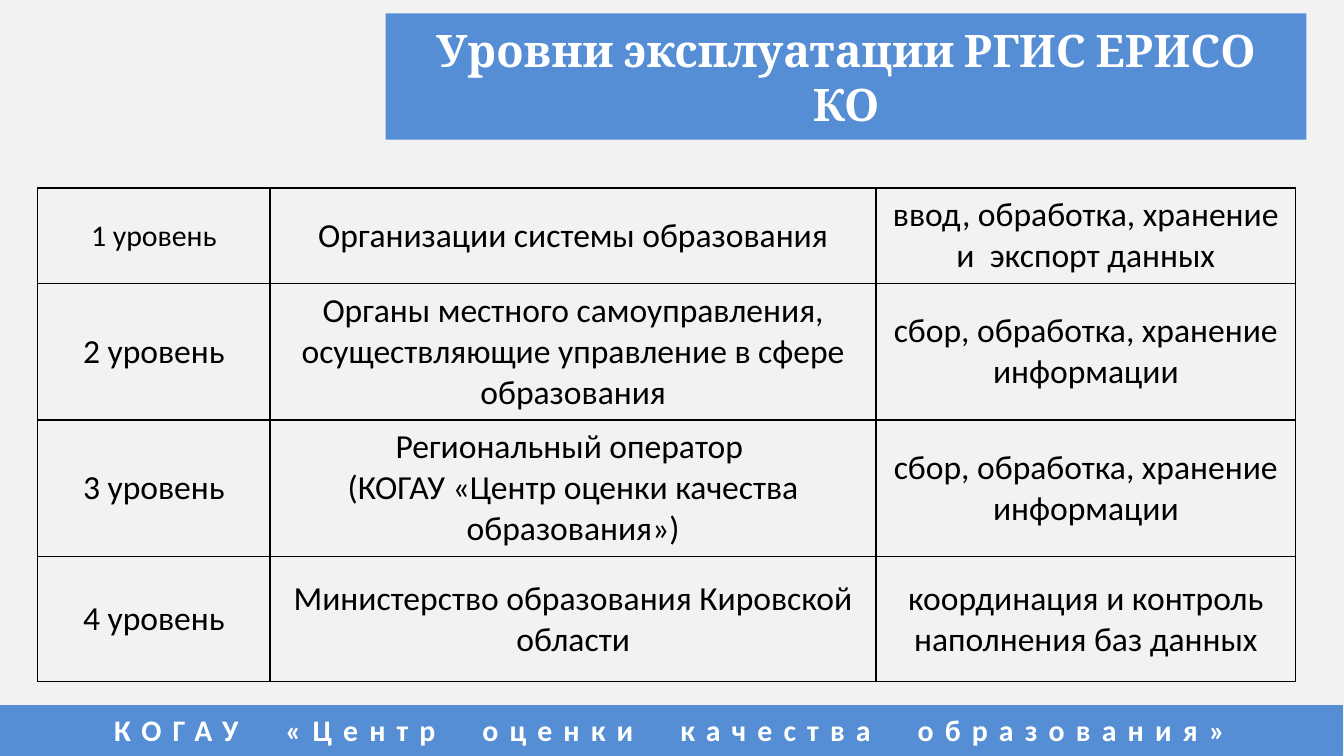
"""Build a slide with a table of the levels at which a regional system is run."""
from lxml.etree import SubElement
from pptx import Presentation
from pptx.dml.color import RGBColor as RGB
from pptx.enum.shapes import MSO_SHAPE as SHAPE
from pptx.enum.text import MSO_ANCHOR as ANCHOR, PP_ALIGN as ALIGN
from pptx.oxml.ns import qn
from pptx.util import Inches, Pt

HUES = {"back": "F2F2F2", "blue": "558ED5", "white": "FFFFFF", "black": "000000"}
TITLE = "Уровни эксплуатации РГИС ЕРИСО КО"
FOOTER = "КОГАУ  «Центр  оценки  качества  образования»"
COLS = (1.73, 4.51, 3.12)
TABLE = (0.28, 1.4, sum(COLS), 3.63)
LEVELS = [
    (0.61, "1 уровень", "Организации системы образования",
     "ввод, обработка, хранение и  экспорт данных"),
    (0.72, "2 уровень", "Органы местного самоуправления, осуществляющие управление в сфере образования",
     "сбор, обработка, хранение информации"),
    (0.93, "3 уровень", "Региональный оператор \n(КОГАУ «Центр оценки качества образования»)",
     "сбор, обработка, хранение информации"),
    (0.93, "4 уровень", "Министерство образования Кировской области",
     "координация и контроль наполнения баз данных"),
]


def color(name):
    return RGB.from_string(HUES[name])


def write(frame, text, size, face, hue, bold=False):
    frame.text = text
    for para in frame.paragraphs:
        para.alignment = ALIGN.CENTER
        font = para.font
        font.size, font.name, font.bold = Pt(size), face, bold
        font.color.rgb = color(hue)


def banner(slide, box, text, size, face, anchor):
    bar = slide.shapes.add_shape(SHAPE.RECTANGLE, *map(Inches, box))
    bar.shadow.inherit = False
    bar.fill.solid()
    bar.fill.fore_color.rgb = color("blue")
    bar.line.fill.background()
    frame = bar.text_frame
    frame.word_wrap = True
    frame.vertical_anchor = anchor
    write(frame, text, size, face, "white", True)
    return bar


def border(cell):
    props = cell._tc.get_or_add_tcPr()
    for side in ("lnL", "lnR", "lnT", "lnB"):
        line = SubElement(props, qn(f"a:{side}"), w=str(Pt(1)))
        fill = SubElement(line, qn("a:solidFill"))
        SubElement(fill, qn("a:srgbClr"), val=HUES["black"])


def grid(slide):
    frame = slide.shapes.add_table(len(LEVELS), len(COLS), *map(Inches, TABLE))
    table = frame.table
    table.first_row = table.horz_banding = False
    for col, width in zip(table.columns, COLS):
        col.width = Inches(width)
    for r, (height, *texts) in enumerate(LEVELS):
        table.rows[r].height = Inches(height)
        for c, text in enumerate(texts):
            cell = table.cell(r, c)
            cell.vertical_anchor = ANCHOR.MIDDLE
            border(cell)
            cell.fill.background()
            write(cell.text_frame, text, 16 if r == c == 0 else 18, "Calibri", "black")
    frame.height = Inches(TABLE[3])


def main():
    deck = Presentation()
    deck.slide_width = Inches(10)
    deck.slide_height = deck.slide_width * 9 // 16
    slide = deck.slides.add_slide(deck.slide_layouts[6])
    slide.background.fill.solid()
    slide.background.fill.fore_color.rgb = color("back")
    foot = banner(slide, (-0.01, 5.25, 10, 0.37), FOOTER, 16, "Calibri", ANCHOR.TOP)
    foot.line.color.rgb = color("blue")
    foot.line.width = Pt(0.75)
    run = foot.text_frame.paragraphs[0].runs[0]
    run._r.get_or_add_rPr().set("spc", "600")
    banner(slide, (2.87, 0.1, 6.85, 0.94), TITLE, 24, "Cambria", ANCHOR.MIDDLE)
    grid(slide)
    deck.save("out.pptx")


if __name__ == "__main__":
    main()
